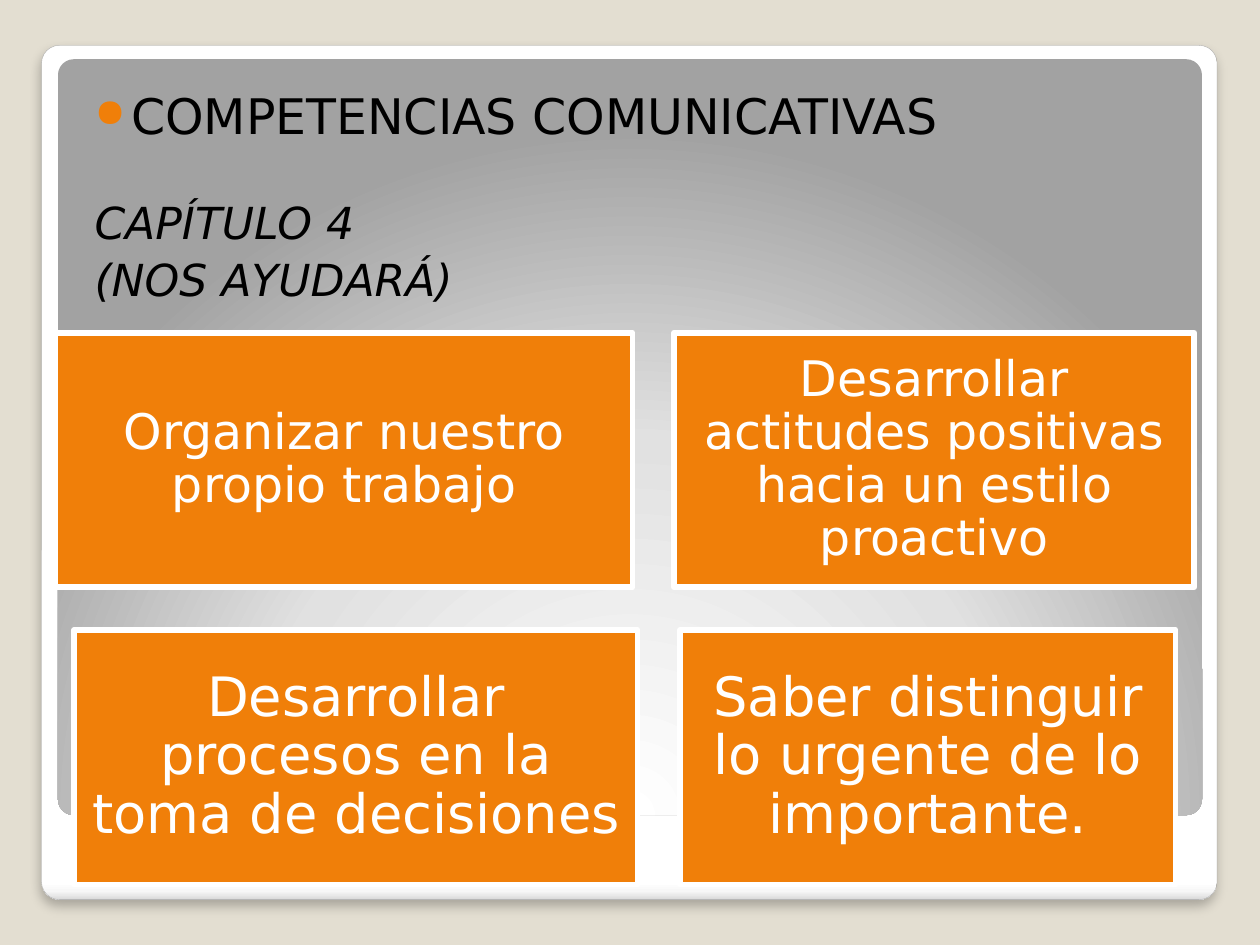
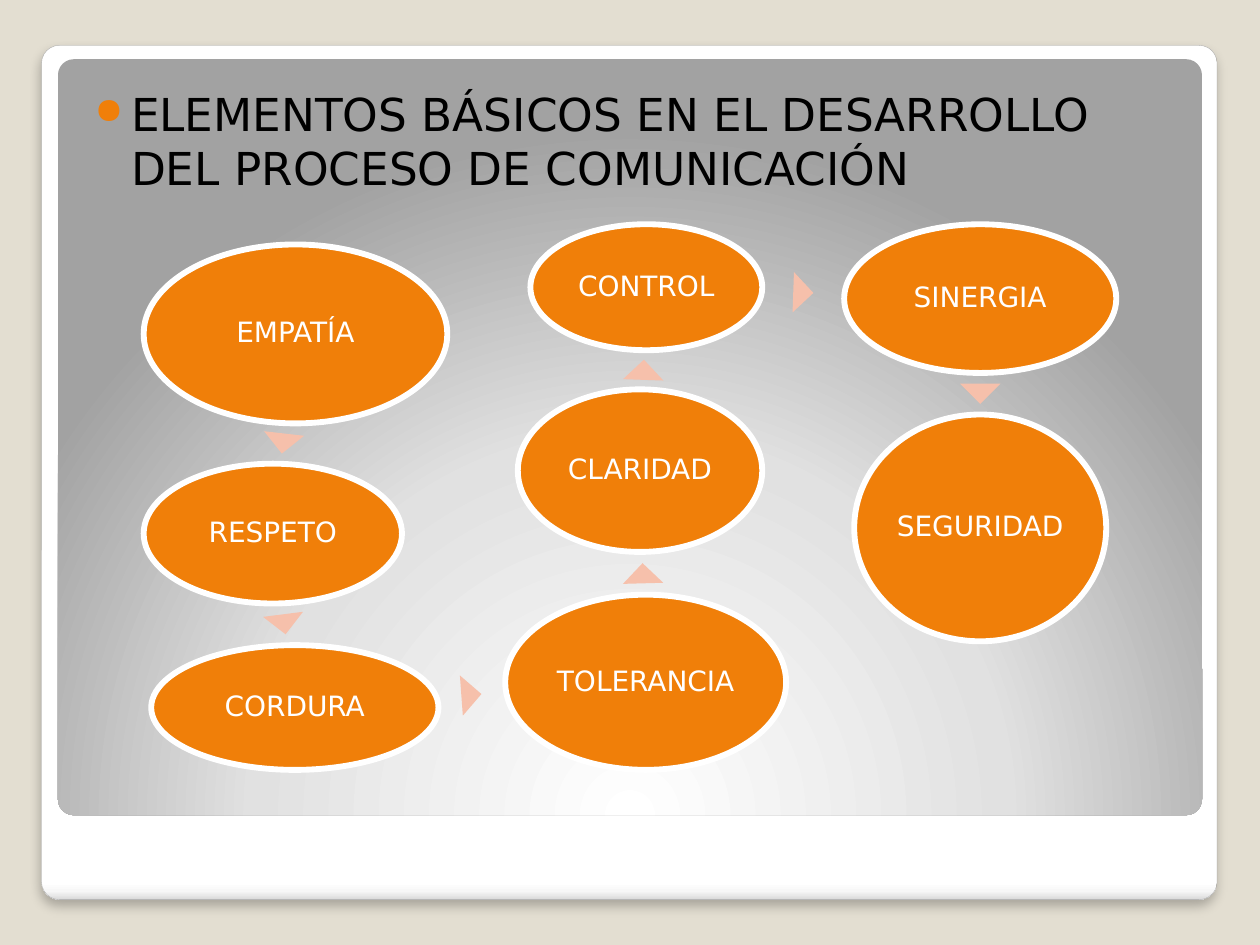
from math import atan2, degrees, hypot
from lxml.etree import SubElement
from pptx import Presentation
from pptx.dml.color import RGBColor
from pptx.enum.shapes import MSO_SHAPE
from pptx.enum.text import MSO_ANCHOR, MSO_AUTO_SIZE, PP_ALIGN
from pptx.oxml import parse_xml
from pptx.oxml.ns import nsdecls, qn
from pptx.util import Inches, Pt

COLORS = {
    "background": "E3DED1",
    "orange": "F07F09",
    "arrow": "F6C0AB",
    "white": "FFFFFF",
    "black": "000000",
    "border": "A4A4A4",
}
FONT = "DejaVu Sans"

FRAME_STOPS = [(0, "FFFFFF"), (98, "FFFFFF"), (99, "F7F7F7"), (100, "DADADA")]
PANEL_STOPS = [(0, "FFFFFF"), (55, "E1E1E1"), (100, "A2A2A2")]
LINEAR = '<a:lin ang="5400000" scaled="0"/>'
RADIAL = (
    '<a:path path="circle">'
    '<a:fillToRect l="50000" t="175000" r="50000" b="-75000"/></a:path>'
)

SKILLS_TITLE = "COMPETENCIAS COMUNICATIVAS"
SKILLS_SUBTITLE = ["CAPÍTULO 4", "(NOS AYUDARÁ)"]
CARD_HEIGHT = 2.02
CARD_ROWS = [
    {"top": 2.64, "size": 28, "inset": 0.12, "cards": [
        ("Organizar nuestro propio trabajo", 0.44, 4.58),
        ("Desarrollar actitudes positivas hacia un estilo proactivo", 5.35, 4.13),
    ]},
    {"top": 5, "size": 31, "inset": 0.13, "cards": [
        ("Desarrollar procesos en la toma de decisiones", 0.59, 4.47),
        ("Saber distinguir lo urgente de lo importante.", 5.4, 3.93),
    ]},
]

ELEMENTS_TITLE = "ELEMENTOS BÁSICOS EN EL DESARROLLO DEL PROCESO DE COMUNICACIÓN"
ELEMENTS = [
    ("EMPATÍA", (1.14, 1.94, 2.41, 1.42)),
    ("RESPETO", (1.14, 3.68, 2.05, 1.11)),
    ("CORDURA", (1.2, 5.12, 2.28, 0.99)),
    ("TOLERANCIA", (4.01, 4.72, 2.23, 1.39)),
    ("CLARIDAD", (4.11, 3.09, 1.94, 1.29)),
    ("CONTROL", (4.21, 1.78, 1.84, 1)),
    ("SINERGIA", (6.7, 1.78, 2.16, 1.18)),
    ("SEGURIDAD", (6.78, 3.29, 2, 1.8)),
]
ARROW_WIDTH, ARROW_HEIGHT = 0.32, 0.16


def color(name):
    return RGBColor.from_string(COLORS[name])


def add_shape(page, kind, place, fill=None, line=None, line_width=0):
    shape = page.shapes.add_shape(kind, *map(Inches, place))
    shape.shadow.inherit = False
    if fill:
        shape.fill.solid()
        shape.fill.fore_color.rgb = color(fill)
    if line:
        shape.line.color.rgb = color(line)
        shape.line.width = Pt(line_width)
    else:
        shape.line.fill.background()
    return shape


def set_insets(frame, left, top, right, bottom):
    frame.margin_left, frame.margin_top = Inches(left), Inches(top)
    frame.margin_right, frame.margin_bottom = Inches(right), Inches(bottom)


def style_font(para, size, color_name):
    para.font.name = FONT
    para.font.size = Pt(size)
    para.font.color.rgb = color(color_name)


def add_label(page, kind, place, text, size, inset):
    shape = add_shape(page, kind, place, "orange", "white", 3.35)
    frame = shape.text_frame
    frame.word_wrap = True
    frame.vertical_anchor = MSO_ANCHOR.MIDDLE
    set_insets(frame, inset, inset, inset, inset)
    para = frame.paragraphs[0]
    para.text = text
    para.alignment = PP_ALIGN.CENTER
    para.line_spacing = 0.9
    style_font(para, size, "white")


def set_gradient(shape, stops, direction):
    stop_xml = "".join(
        f'<a:gs pos="{position * 1000}"><a:srgbClr val="{value}"/></a:gs>'
        for position, value in stops
    )
    gradient = parse_xml(
        f'<a:gradFill {nsdecls("a")} rotWithShape="1">'
        f"<a:gsLst>{stop_xml}</a:gsLst>{direction}</a:gradFill>"
    )
    shape.element.spPr.find(qn("a:prstGeom")).addnext(gradient)


def add_soft_shadow(shape):
    effects = shape.element.spPr.find(qn("a:effectLst"))
    shadow = SubElement(effects, qn("a:outerShdw"), blurRad=str(Pt(6)),
                        dist=str(Pt(4)), dir="5400000", algn="t", rotWithShape="0")
    tint = SubElement(shadow, qn("a:srgbClr"), val=COLORS["black"])
    SubElement(tint, qn("a:alpha"), val="25000")


def build_backdrop(deck, layout, page):
    background = deck.slide_master.background.fill
    background.solid()
    background.fore_color.rgb = color("background")
    rounded = MSO_SHAPE.ROUNDED_RECTANGLE
    frame = add_shape(page, rounded, (0.33, 0.36, 9.33, 6.78),
                      line="border", line_width=0.16)
    panel = add_shape(page, rounded, (0.46, 0.47, 9.08, 6))
    set_gradient(frame, FRAME_STOPS, LINEAR)
    set_gradient(panel, PANEL_STOPS, RADIAL)
    add_soft_shadow(frame)
    for shape in (frame, panel):
        shape.adjustments[0] = 0.021
        layout.shapes.element.append(shape.element)


def add_bullet(para):
    properties = para._p.get_or_add_pPr()
    properties.set("marL", str(Inches(0.29)))
    properties.set("indent", str(Inches(-0.29)))
    bullet_color = SubElement(properties, qn("a:buClr"))
    SubElement(bullet_color, qn("a:srgbClr"), val=COLORS["orange"])
    SubElement(properties, qn("a:buSzPct"), val="80000")
    SubElement(properties, qn("a:buChar"), char="●")


def format_title(page, text, size, width, height):
    title = page.shapes.title
    title.left, title.top = Inches(0.55), Inches(0.58)
    title.width, title.height = Inches(width), Inches(height)
    frame = title.text_frame
    frame.word_wrap = True
    frame.auto_size = MSO_AUTO_SIZE.NONE
    frame.vertical_anchor = MSO_ANCHOR.TOP
    set_insets(frame, 0.2, 0.1, 0.1, 0.05)
    para = frame.paragraphs[0]
    para.text = text
    para.alignment = PP_ALIGN.LEFT
    para.space_before = Pt(2.5)
    add_bullet(para)
    style_font(para, size, "black")
    return frame


def build_skills(page):
    frame = format_title(page, SKILLS_TITLE, 28, 8.07, 1.67)
    for text, gap in zip(SKILLS_SUBTITLE, (29, 2.5)):
        para = frame.add_paragraph()
        para.text = text
        para.alignment = PP_ALIGN.LEFT
        para.space_before = Pt(gap)
        para.font.italic = True
        style_font(para, 25.2, "black")
    for row in CARD_ROWS:
        for text, left, width in row["cards"]:
            place = (left, row["top"], width, CARD_HEIGHT)
            add_label(page, MSO_SHAPE.RECTANGLE, place, text, row["size"], row["inset"])


def add_arrow(page, start, end):
    (x1, y1), (x2, y2) = [
        (left + width / 2, top + height / 2)
        for left, top, width, height in (start, end)
    ]
    distance = hypot(x2 - x1, y2 - y1)
    across, down = (x2 - x1) / distance, (y2 - y1) / distance
    start_radius, end_radius = [
        1 / hypot(2 * across / width, 2 * down / height)
        for _, _, width, height in (start, end)
    ]
    middle = (start_radius + distance - end_radius) / 2
    place = (x1 + across * middle - ARROW_WIDTH / 2,
             y1 + down * middle - ARROW_HEIGHT / 2, ARROW_WIDTH, ARROW_HEIGHT)
    arrow = add_shape(page, MSO_SHAPE.ISOSCELES_TRIANGLE, place, "arrow")
    arrow.rotation = degrees(atan2(down, across)) + 90


def build_elements(page):
    format_title(page, ELEMENTS_TITLE, 25.9, 8.95, 1.28)
    for text, place in ELEMENTS:
        add_label(page, MSO_SHAPE.OVAL, place, text, 16, 0.02)
    for (_, start), (_, end) in zip(ELEMENTS, ELEMENTS[1:]):
        add_arrow(page, start, end)


def main():
    deck = Presentation()
    deck.slide_width, deck.slide_height = Inches(10), Inches(7.5)
    layout = deck.slide_layouts.get_by_name("Title Only")
    skills_page, elements_page = [deck.slides.add_slide(layout) for _ in range(2)]
    build_backdrop(deck, layout, skills_page)
    build_skills(skills_page)
    build_elements(elements_page)
    deck.save("out.pptx")


if __name__ == "__main__":
    main()
